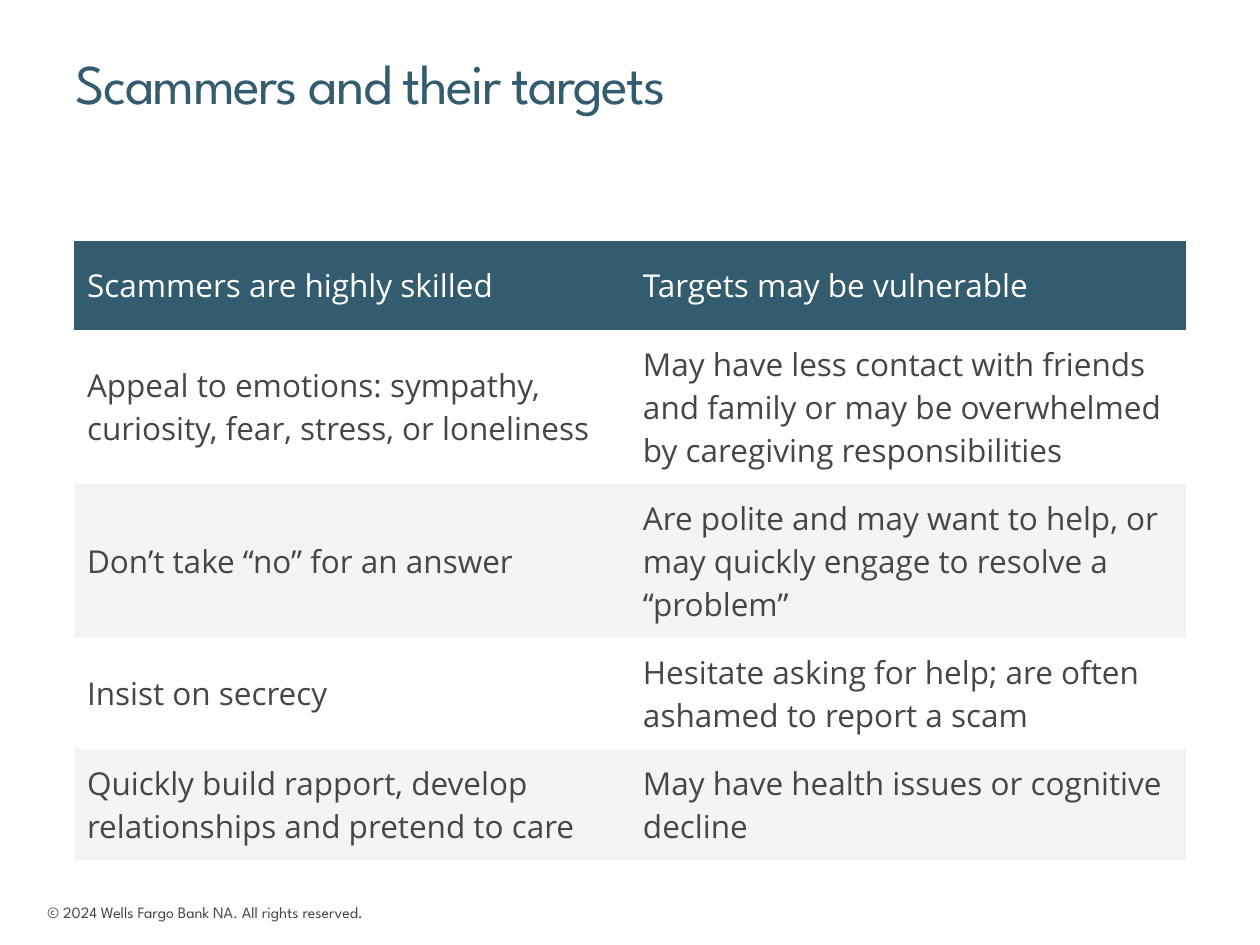
from pptx import Presentation
from pptx.dml.color import RGBColor
from pptx.enum.text import MSO_ANCHOR, PP_ALIGN
from pptx.oxml.ns import qn
from pptx.util import Pt

MIDDLE, BOTTOM = MSO_ANCHOR.MIDDLE, MSO_ANCHOR.BOTTOM
LEFT = PP_ALIGN.LEFT

# Content
TITLE = "Scammers and their targets"
COPYRIGHT = "© 2024 Wells Fargo Bank NA. All rights reserved."
ROWS = [
    ("Scammers are highly skilled", "Targets may be vulnerable"),
    ("Appeal to emotions: sympathy, curiosity, fear, stress, or loneliness",
     "May have less contact with friends and family or may be overwhelmed by caregiving responsibilities"),
    ("Don’t take “no” for an answer",
     "Are polite and may want to help, or may quickly engage to resolve a “problem”"),
    ("Insist on secrecy",
     "Hesitate asking for help; are often ashamed to report a scam"),
    ("Quickly build rapport, develop relationships and pretend to care",
     "May have health issues or cognitive decline"),
]

# Layout in px
SLIDE_SIZE = (1260, 945)
TITLE_BOX = (76, 44, 1134, 72)
COPYRIGHT_BOX = (35, 897, 384, 32)
TABLE_LEFT, TABLE_TOP, COLUMN_WIDTH = 74, 241, 556
ROW_HEIGHTS = [89, 154, 154, 111, 111]
CELL_MARGIN = 13

TEAL, GREY, PALE, WHITE = "345C6F", "44464A", "F2F5F3", "FFFFFF"
HEADING_FONT, BODY_FONT = "League Spartan", "Open Sans"
NO_STYLE_NO_GRID = "{2D5ABB26-0587-4C30-8999-92F81FD0307C}"


def px(length):
    return round(length * 914400 / 126)


def color(value):
    return RGBColor.from_string(value)


def write(text_frame, text, font, size, fill, line_spacing=None, tracking=None):
    paragraph = text_frame.paragraphs[0]
    paragraph.alignment = LEFT
    paragraph.line_spacing = line_spacing
    run = paragraph.add_run()
    run.text = text
    run.font.name = font
    run.font.size = Pt(size)
    run.font.bold = False
    run.font.color.rgb = color(fill)
    if tracking is not None:
        run.font._element.set("spc", str(tracking * 100))


presentation = Presentation()
presentation.slide_width, presentation.slide_height = map(px, SLIDE_SIZE)
slide = presentation.slides.add_slide(presentation.slide_layouts[5])

# Title
title = slide.shapes.title
title.left, title.top, title.width, title.height = map(px, TITLE_BOX)
frame = title.text_frame
frame.margin_left = frame.margin_top = frame.margin_right = frame.margin_bottom = 0
frame.vertical_anchor = BOTTOM
write(frame, TITLE, HEADING_FONT, 32, TEAL, line_spacing=1.05, tracking=-1)

# Copyright line
footer = slide.shapes.add_textbox(*map(px, COPYRIGHT_BOX))
footer.text_frame.word_wrap = False
write(footer.text_frame, COPYRIGHT, HEADING_FONT, 9, GREY)

# Table with a header and alternating bands
column_count = len(ROWS[0])
table = slide.shapes.add_table(
    len(ROWS), column_count, px(TABLE_LEFT), px(TABLE_TOP),
    px(COLUMN_WIDTH * column_count), px(sum(ROW_HEIGHTS))).table
table._tbl.tblPr.find(qn("a:tableStyleId")).text = NO_STYLE_NO_GRID
for column in table.columns:
    column.width = px(COLUMN_WIDTH)
for row_index, (texts, height) in enumerate(zip(ROWS, ROW_HEIGHTS)):
    table.rows[row_index].height = px(height)
    is_header = row_index == 0
    band = TEAL if is_header else WHITE if row_index % 2 else PALE
    for column_index, text in enumerate(texts):
        cell = table.cell(row_index, column_index)
        cell.margin_left = cell.margin_right = px(CELL_MARGIN)
        cell.margin_top = cell.margin_bottom = px(CELL_MARGIN)
        cell.vertical_anchor = MIDDLE
        cell.fill.solid()
        cell.fill.fore_color.rgb = color(band)
        write(cell.text_frame, text, BODY_FONT, 18, WHITE if is_header else GREY)

presentation.save("out.pptx")
